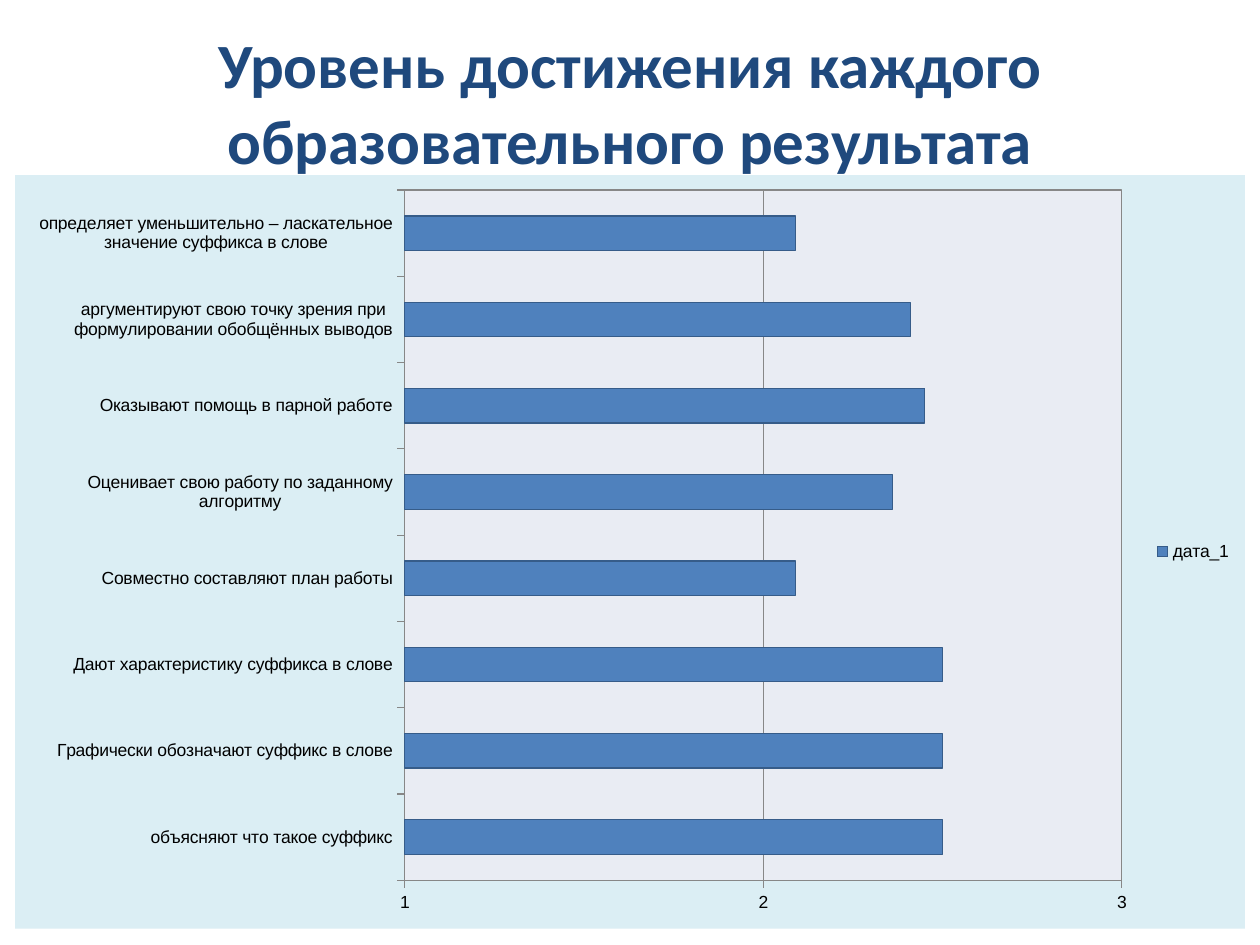
from lxml.etree import SubElement as Sub
from pptx import Presentation
from pptx.chart.data import CategoryChartData as Data
from pptx.dml.color import RGBColor as RGB
from pptx.enum.chart import XL_CHART_TYPE as Kind, XL_LEGEND_POSITION as Spot, XL_TICK_MARK as Tick
from pptx.enum.text import MSO_ANCHOR as Anchor, PP_ALIGN as Align
from pptx.oxml import parse_xml
from pptx.oxml.ns import nsdecls, qn
from pptx.util import Pt

NAVY = RGB(0x1F, 0x49, 0x7D)
BLACK = RGB(0, 0, 0)
GREY = RGB(0x87, 0x87, 0x87)
BLUE = RGB(0x4F, 0x81, 0xBD)
EDGE = RGB(0x36, 0x5C, 0x89)
PALE = RGB(0xDB, 0xEE, 0xF4)
MIST = RGB(0xE9, 0xEC, 0xF3)

TITLE = "Уровень достижения каждого образовательного результата"
SERIES = "дата_1"
LEVELS = {
    "объясняют что такое суффикс": 2.5,
    "Графически обозначают суффикс в слове": 2.5,
    "Дают характеристику суффикса в слове": 2.5,
    "Совместно составляют план работы": 2.09,
    "Оценивает свою работу по заданному алгоритму": 2.36,
    "Оказывают помощь в парной работе": 2.45,
    "аргументируют свою точку зрения при формулировании обобщённых выводов": 2.41,
    "определяет уменьшительно – ласкательное значение суффикса в слове": 2.09,
}
INNER = {"x": 0.317, "y": 0.02, "w": 0.583, "h": 0.916}


class Deck:
    head = {"name": "Calibri", "size": Pt(36), "bold": True}
    body = {"name": "Arial", "size": Pt(10), "bold": False}
    thin = Pt(0.75)

    def __init__(self, slide):
        self.slide = slide

    def style(self, font, look, color):
        for key, value in look.items():
            setattr(font, key, value)
        font.color.rgb = color

    def stroke(self, line, color):
        line.color.rgb = color
        line.width = self.thin

    def paint(self, fill, line):
        edge = f'<a:solidFill><a:srgbClr val="{line}"/></a:solidFill>' if line else "<a:noFill/>"
        return parse_xml(
            f'<c:spPr {nsdecls("c", "a")}><a:solidFill><a:srgbClr val="{fill}"/></a:solidFill>'
            f'<a:ln w="{int(self.thin)}">{edge}</a:ln></c:spPr>'
        )

    def title(self, text, box):
        frame = self.slide.shapes.add_textbox(*map(Pt, box)).text_frame
        frame.word_wrap = True
        frame.vertical_anchor = Anchor.MIDDLE
        para = frame.paragraphs[0]
        para.alignment = Align.CENTER
        run = para.add_run()
        run.text = text
        self.style(run.font, self.head, NAVY)

    def place(self, area, inner):
        for old in area.findall(qn("c:layout")):
            area.remove(old)
        layout = parse_xml(f'<c:layout {nsdecls("c")}/>')
        area.insert(0, layout)
        manual = Sub(layout, qn("c:manualLayout"))
        rules = {"layoutTarget": "inner", "xMode": "edge", "yMode": "edge", **inner}
        for key, value in rules.items():
            Sub(manual, qn(f"c:{key}")).set("val", str(value))

    def bars(self, name, levels, box):
        data = Data()
        data.categories = list(levels)
        data.add_series(name, list(levels.values()))
        chart = self.slide.shapes.add_chart(Kind.BAR_CLUSTERED, *map(Pt, box), data).chart
        self.style(chart.font, self.body, BLACK)
        chart.has_title = False
        chart.has_legend = True
        chart.legend.position = Spot.RIGHT
        chart.legend.include_in_layout = False

        plot = chart.plots[0]
        plot.gap_width = 150
        plot.vary_by_categories = False
        bar = plot.series[0].format
        bar.fill.solid()
        bar.fill.fore_color.rgb = BLUE
        self.stroke(bar.line, EDGE)

        scale = chart.value_axis
        rules = {"minimum_scale": 1, "maximum_scale": 3, "major_unit": 1, "has_major_gridlines": True}
        for key, value in rules.items():
            setattr(scale, key, value)
        self.stroke(scale.major_gridlines.format.line, GREY)
        for axis in (chart.category_axis, scale):
            axis.major_tick_mark = Tick.OUTSIDE
            axis.minor_tick_mark = Tick.NONE
            self.stroke(axis.format.line, GREY)

        root = chart.element.find(qn("c:chart"))
        root.addnext(self.paint(PALE, None))
        area = root.find(qn("c:plotArea"))
        area.append(self.paint(MIST, GREY))
        self.place(area, INNER)


def main():
    show = Presentation()
    show.slide_width, show.slide_height = Pt(720), Pt(540)
    deck = Deck(show.slides.add_slide(show.slide_layouts[6]))
    deck.title(TITLE, (36, 21.6, 648, 72.7))
    deck.bars(SERIES, LEVELS, (8.6, 100, 702.8, 430.6))
    show.save("out.pptx")


if __name__ == "__main__":
    main()
